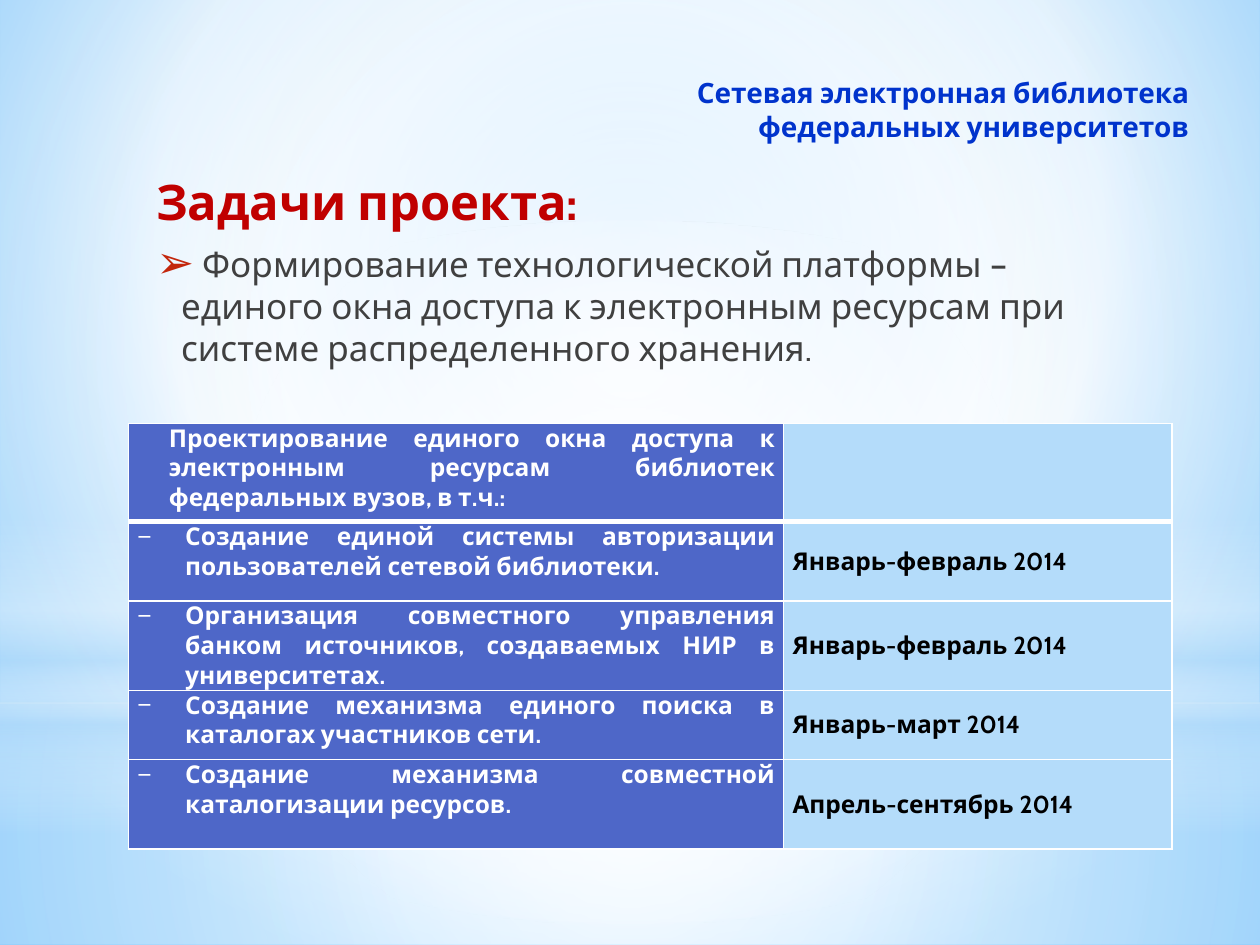
from dataclasses import dataclass

from pptx import Presentation
from pptx.dml.color import RGBColor
from pptx.enum.shapes import MSO_SHAPE as Shape
from pptx.enum.text import MSO_ANCHOR as Anchor, PP_ALIGN as Align
from pptx.oxml import parse_xml
from pptx.oxml.ns import nsdecls, qn
from pptx.util import Inches, Pt


@dataclass(frozen=True)
class Theme:
    """Colours, font and type sizes of the slide."""
    font: str = "Cabin"
    title: str = "0033CC"
    heading: str = "C00000"
    body: str = "404040"
    bullet: str = "C3260C"
    white: str = "FFFFFF"
    black: str = "000000"
    task: str = "4E67C8"
    pale: str = "B4DCFA"
    glow: str = "9ED5FF"
    edge: str = "5BB9FF"
    title_size: int = 16
    heading_size: int = 28
    body_size: int = 20
    table_size: int = 14


CENTRE = (50, 50, 50, 50)


def gradient_xml(stops, focus=None):
    """Return a gradient fill, circular around a focus or else vertical."""
    marks = "".join(
        f'<a:gs pos="{position * 1000}"><a:srgbClr val="{color}">'
        f'<a:alpha val="{opacity * 1000}"/></a:srgbClr></a:gs>'
        for position, color, opacity in stops
    )
    if focus:
        sides = " ".join(f'{side}="{value * 1000}"' for side, value in zip("ltrb", focus))
        direction = f'<a:path path="circle"><a:fillToRect {sides}/></a:path>'
    else:
        direction = '<a:lin ang="5400000" scaled="0"/>'
    return (f'<a:gradFill {nsdecls("a")} rotWithShape="1">'
            f'<a:gsLst>{marks}</a:gsLst>{direction}</a:gradFill>')


class SlideBuilder:
    """Draws styled elements on the current slide."""

    def __init__(self, slide, theme):
        """Keep the slide and its theme."""
        self.slide = slide
        self.theme = theme

    def background(self, stops, focus):
        """Fill the slide background with a gradient."""
        self.slide.element.find(qn("p:cSld")).insert(0, parse_xml(
            f'<p:bg {nsdecls("p", "a")}><p:bgPr>{gradient_xml(stops, focus)}'
            '<a:effectLst/></p:bgPr></p:bg>'))

    def glow(self, kind, box, stops, focus=None):
        """Add a borderless shape with a translucent gradient."""
        shape = self.slide.shapes.add_shape(kind, *map(Inches, box))
        shape.shadow.inherit = False
        shape.line.fill.background()
        shape.fill.background()
        properties = shape.element.spPr
        properties.replace(properties.find(qn("a:noFill")),
                           parse_xml(gradient_xml(stops, focus)))

    def run(self, paragraph, text, size, color, bold=True):
        """Add one formatted run to a paragraph."""
        run = paragraph.add_run()
        run.text = text
        run.font.name = self.theme.font
        run.font.size = Pt(size)
        run.font.bold = bold
        run.font.color.rgb = RGBColor.from_string(color)

    def indent(self, paragraph, left, first=0, bullet=None, color=None, scale=100):
        """Set paragraph indents and an optional bullet."""
        properties = paragraph._p.get_or_add_pPr()
        properties.set("marL", str(Inches(left)))
        properties.set("indent", str(Inches(first)))
        if bullet:
            for tag in (f'buClr {nsdecls("a")}><a:srgbClr val="{color}"/></a:buClr',
                        f'buSzPct {nsdecls("a")} val="{scale * 1000}"/',
                        f'buFont {nsdecls("a")} typeface="Arial"/',
                        f'buChar {nsdecls("a")} char="{bullet}"/'):
                properties.append(parse_xml(f"<a:{tag}>"))

    def title(self, box, lines):
        """Place the title in front of the backdrop."""
        title = self.slide.shapes.title
        self.slide.shapes.element.append(title.element)
        title.left, title.top, title.width, title.height = map(Inches, box)
        frame = title.text_frame
        frame.word_wrap = True
        frame.vertical_anchor = Anchor.TOP
        paragraph = frame.paragraphs[0]
        paragraph.alignment = Align.RIGHT
        for index, line in enumerate(lines):
            if index:
                paragraph.add_line_break()
            self.run(paragraph, line, self.theme.title_size, self.theme.title)

    def body(self, box, heading, text):
        """Add the heading and its bulleted statement."""
        theme = self.theme
        frame = self.slide.shapes.add_textbox(*map(Inches, box)).text_frame
        frame.word_wrap = True
        first, second = frame.paragraphs[0], frame.add_paragraph()
        for paragraph in (first, second):
            paragraph.space_before, paragraph.space_after = Pt(4), Pt(3)
        self.indent(first, 0.05)
        self.run(first, heading, theme.heading_size, theme.heading)
        self.indent(second, 0.25, -0.2, "➢", theme.bullet, 130)
        self.run(second, text, theme.body_size, theme.body, bold=False)

    def cell(self, cell, fill, bottom):
        """Set the fill, margins and white borders of a cell."""
        cell.margin_left = cell.margin_right = Inches(0.07)
        cell.margin_top = cell.margin_bottom = 0
        cell.fill.solid()
        cell.fill.fore_color.rgb = RGBColor.from_string(fill)
        properties = cell._tc.get_or_add_tcPr()
        for index, side in enumerate("LRTB"):
            width = Pt(bottom if side == "B" else 1)
            properties.insert(index, parse_xml(
                f'<a:ln{side} {nsdecls("a")} w="{width}"><a:solidFill>'
                f'<a:srgbClr val="{self.theme.white}"/></a:solidFill></a:ln{side}>'))

    def schedule(self, box, widths, heights, rows):
        """Add the table of tasks and dates."""
        theme = self.theme
        table = self.slide.shapes.add_table(
            len(rows), len(widths), *map(Inches, box)).table
        for column, width in zip(table.columns, widths):
            column.width = Inches(width)
        for index, (height, (task, date)) in enumerate(zip(heights, rows)):
            table.rows[index].height = Inches(height)
            left, right = table.cell(index, 0), table.cell(index, 1)
            bottom = 1 if index else 3
            self.cell(left, theme.task, bottom)
            self.cell(right, theme.pale, bottom)
            paragraph = left.text_frame.paragraphs[0]
            paragraph.alignment = Align.JUSTIFY
            if index:
                self.indent(paragraph, 0.38, -0.38, "−", theme.white)
            else:
                self.indent(paragraph, 0.25)
            self.run(paragraph, task, theme.table_size, theme.white)
            if date:
                right.vertical_anchor = Anchor.MIDDLE
                self.run(right.text_frame.paragraphs[0], date,
                         theme.table_size, theme.black)


def main():
    """Build and save the slide."""
    presentation = Presentation()
    presentation.slide_width, presentation.slide_height = Inches(10), Inches(7.5)
    theme = Theme()
    white, pale = theme.white, theme.pale
    builder = SlideBuilder(
        presentation.slides.add_slide(presentation.slide_layouts[5]), theme)
    builder.background(
        [(0, theme.glow, 100), (60, white, 100), (100, theme.edge, 100)], (20, 10, 20, 60))
    builder.glow(Shape.RECTANGLE, (0, 5.58, 10, 1.92),
                 [(0, white, 91), (37, white, 76), (100, pale, 79)], CENTRE)
    builder.glow(Shape.RECTANGLE, (0, 0, 10, 5.58),
                 [(0, white, 89), (48, white, 62), (100, pale, 79)], CENTRE)
    builder.glow(Shape.RECTANGLE, (0, 4.12, 10, 2.5),
                 [(0, white, 0), (29, white, 30), (45, pale, 40),
                  (55, white, 26), (65, pale, 60), (100, white, 0)])
    builder.glow(Shape.OVAL, (0, 1.75, 10, 5.58),
                 [(0, white, 100), (56, white, 0)], CENTRE)
    builder.title((2.42, 0.55, 7.12, 0.71),
                  ["Сетевая электронная библиотека", "федеральных университетов"])
    builder.body((1.09, 1.31, 7.97, 5.28), "Задачи проекта:",
                 " Формирование технологической платформы – единого окна доступа "
                 "к электронным ресурсам при системе распределенного хранения.")
    builder.schedule((1.02, 3.36, 8.28, 3.38), (5.2, 3.08), (0.78, 0.63, 0.71, 0.55, 0.71), [
        ("Проектирование единого окна доступа к электронным ресурсам "
         "библиотек федеральных вузов, в т.ч.:", None),
        ("Создание единой системы авторизации пользователей сетевой библиотеки.",
         "Январь-февраль 2014"),
        ("Организация совместного управления банком источников, "
         "создаваемых НИР в университетах.", "Январь-февраль 2014"),
        ("Создание механизма единого поиска в каталогах участников сети.",
         "Январь-март 2014"),
        ("Создание механизма совместной каталогизации ресурсов.",
         "Апрель-сентябрь 2014"),
    ])
    presentation.save("out.pptx")


if __name__ == "__main__":
    main()
